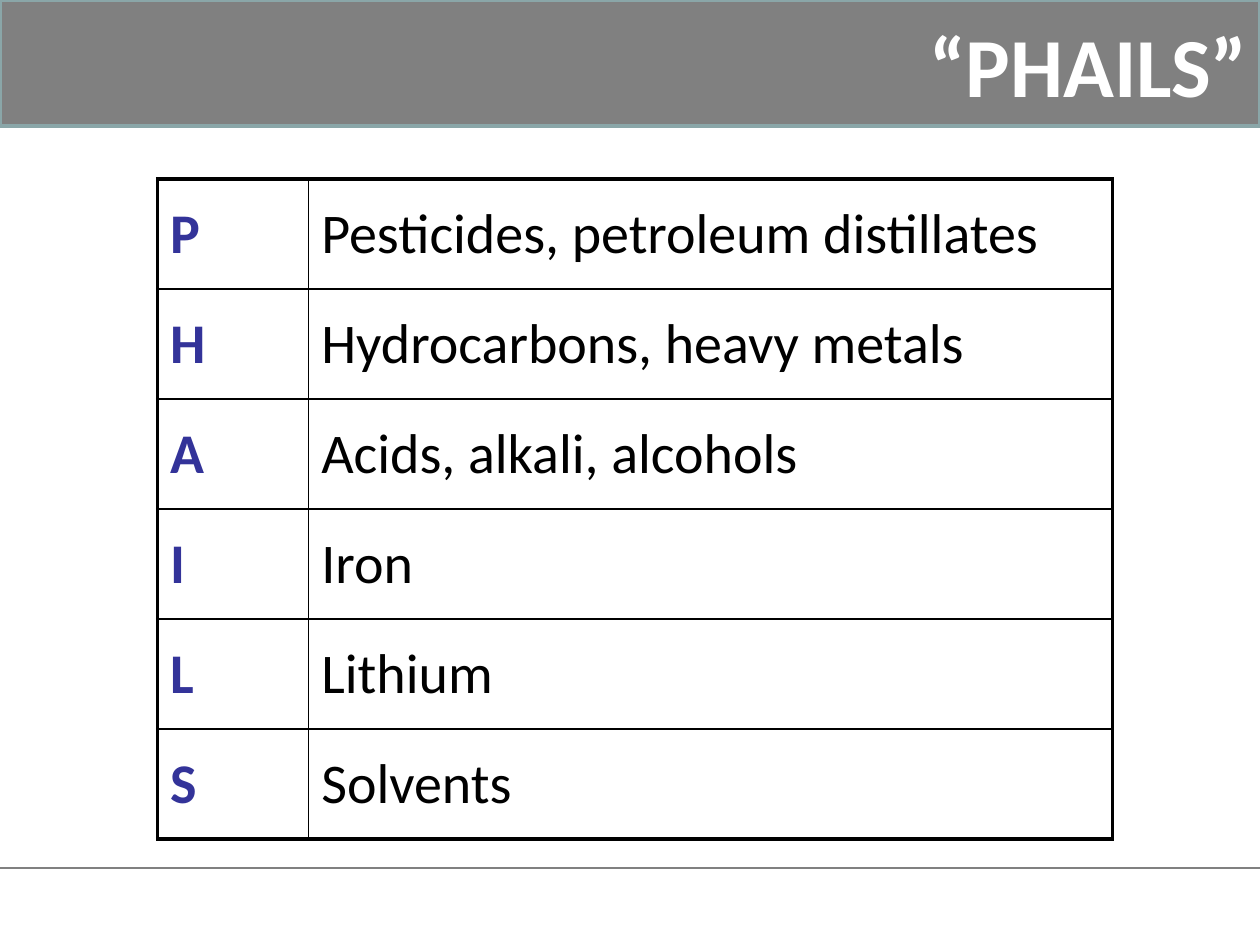
from lxml.etree import SubElement
from pptx import Presentation
from pptx.dml.color import RGBColor
from pptx.enum.shapes import MSO_CONNECTOR, MSO_SHAPE
from pptx.enum.text import MSO_ANCHOR as Anchor, PP_ALIGN as Align
from pptx.oxml.ns import qn
from pptx.util import Pt

PX = 9144  # EMU per px, 100 px to the inch
WIDTH, HEIGHT = 1000, 750
FONT = "Calibri"
GREY = RGBColor(0x80, 0x80, 0x80)
TEAL = RGBColor(0x8A, 0xA6, 0xA8)
INDIGO = RGBColor(0x33, 0x33, 0x99)
BLACK = RGBColor(0, 0, 0)
WHITE = RGBColor(255, 255, 255)
THIN, THICK = Pt(1), Pt(2.25)

MNEMONIC = [
    ("P", "Pesticides, petroleum distillates"),
    ("H", "Hydrocarbons, heavy metals"),
    ("A", "Acids, alkali, alcohols"),
    ("I", "Iron"),
    ("L", "Lithium"),
    ("S", "Solvents"),
]


def px(*lengths):
    return [length * PX for length in lengths]


def style(paragraph, size, color, bold):
    font = paragraph.runs[0].font
    font.name, font.size, font.bold = FONT, Pt(size), bold
    font.color.rgb = color


def add_header(slide, left, top, width, height):
    # Grey band
    band = slide.shapes.add_shape(MSO_SHAPE.RECTANGLE, *px(left, top, width, height))
    band.shadow.inherit = False
    band.fill.solid()
    band.fill.fore_color.rgb = GREY
    band.line.color.rgb = TEAL
    band.line.width = Pt(2)

    # Title, right-aligned in the band
    title = slide.shapes.add_textbox(*px(left + 208, top + 2, width - 208, height - 2))
    frame = title.text_frame
    frame.word_wrap = True
    frame.vertical_anchor = Anchor.MIDDLE
    frame.text = "“PHAILS”"
    frame.paragraphs[0].alignment = Align.RIGHT
    style(frame.paragraphs[0], 48, WHITE, True)


def add_footer_rule(slide, left, top, width):
    rule = slide.shapes.add_connector(
        MSO_CONNECTOR.STRAIGHT, *px(left, top, left + width, top))
    rule.line.color.rgb = GREY
    rule.line.width = Pt(1.5)
    SubElement(rule._element.spPr, qn("a:effectLst"))


def set_borders(cell, widths):
    properties = cell._tc.get_or_add_tcPr()
    for position, (side, width) in enumerate(widths.items()):
        border = SubElement(properties, qn(f"a:ln{side}"), w=str(width))
        fill = SubElement(border, qn("a:solidFill"))
        SubElement(fill, qn("a:srgbClr"), val=str(BLACK))
        properties.insert(position, border)  # borders come before the fill


def add_mnemonic_table(slide, left, top, width, height, letter_width):
    rows = len(MNEMONIC)
    table = slide.shapes.add_table(rows, 2, *px(left, top, width, height)).table
    table.first_row = table.horz_banding = False
    table.columns[0].width, table.columns[1].width = px(
        letter_width, width - letter_width)

    for row, entry in enumerate(MNEMONIC):
        for column, wording in enumerate(entry):
            is_letter = column == 0
            cell = table.cell(row, column)
            cell.fill.background()
            cell.vertical_anchor = Anchor.MIDDLE
            cell.text = wording
            style(cell.text_frame.paragraphs[0], 32,
                  INDIGO if is_letter else BLACK, is_letter)
            set_borders(cell, {
                "L": THICK if is_letter else THIN,
                "R": THIN if is_letter else THICK,
                "T": THICK if row == 0 else THIN,
                "B": THICK if row == rows - 1 else THIN,
            })


def main():
    presentation = Presentation()
    presentation.slide_width, presentation.slide_height = px(WIDTH, HEIGHT)
    slide = presentation.slides.add_slide(presentation.slide_layouts[6])
    add_header(slide, 0, 0, WIDTH, 100)
    add_footer_rule(slide, 0, 689, WIDTH)
    add_mnemonic_table(slide, 125, 142, 758, 524, letter_width=120)
    presentation.save("out.pptx")


if __name__ == "__main__":
    main()
